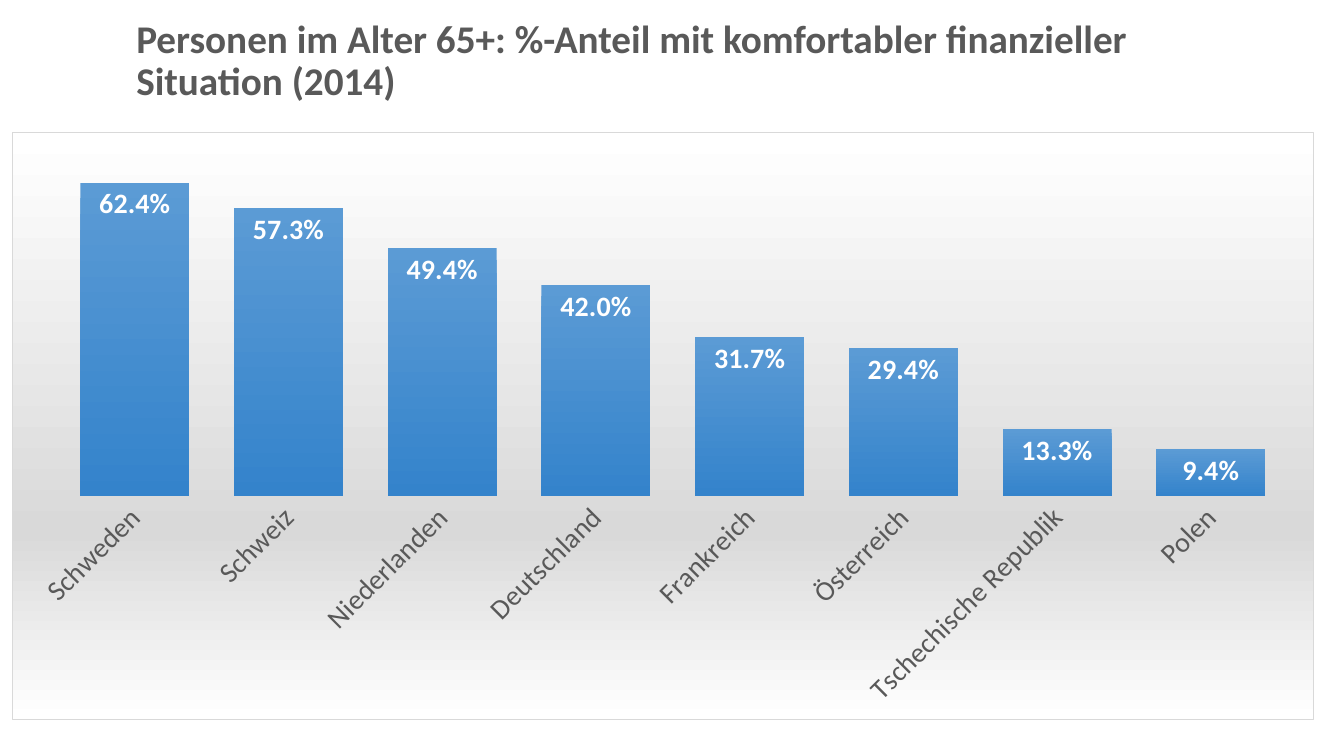
from pptx import Presentation
from pptx.chart.data import CategoryChartData
from pptx.dml.color import RGBColor
from pptx.enum.chart import XL_CHART_TYPE, XL_LABEL_POSITION, XL_TICK_MARK
from pptx.enum.text import MSO_ANCHOR, MSO_AUTO_SIZE, PP_ALIGN
from pptx.oxml import parse_xml
from pptx.oxml.ns import nsdecls
from pptx.util import Cm, Pt

COLUMN = XL_CHART_TYPE.COLUMN_CLUSTERED
INSIDE = XL_LABEL_POSITION.INSIDE_END
NO_TICK = XL_TICK_MARK.NONE
MIDDLE = MSO_ANCHOR.MIDDLE
NO_FIT = MSO_AUTO_SIZE.NONE
LEFT = PP_ALIGN.LEFT

FACE = "Calibri"
GREY = "595959"
RATE = "0.0%"
TITLE = "Personen im Alter 65+: %-Anteil mit komfortabler finanzieller Situation (2014)"
SHARES = {
    "Schweden": 0.624,
    "Schweiz": 0.573,
    "Niederlanden": 0.494,
    "Deutschland": 0.42,
    "Frankreich": 0.317,
    "Österreich": 0.294,
    "Tschechische Republik": 0.133,
    "Polen": 0.094,
}
TITLE_BOX = (3.18, 0.74, 28.88, 1.63)
CHART_BOX = (0.3, 3.33, 32.82, 14.81)
PLOT_BOX = {"x": 0.035, "y": 0.02, "w": 0.945, "h": 0.6}
BACK = [(0, "FFFFFF"), (68, "D9D9D9"), (100, "FFFFFF")]
BLUES = [(0, "5B9BD5"), (100, "3483CB")]


def color(code):
    """Turn a hex string into a colour."""
    return RGBColor.from_string(code)


def apply(target, values):
    """Set each named value on the target."""
    for name, value in values.items():
        setattr(target, name, value)


def style(font, size, code, bold=False):
    """Format a font."""
    apply(font, {"name": FACE, "size": Pt(size), "bold": bold})
    font.color.rgb = color(code)


def shade(stops, edge=None):
    """Build shape properties with a downward gradient and an optional edge."""
    marks = "".join(
        f'<a:gs pos="{pos * 1000}"><a:srgbClr val="{code}"/></a:gs>' for pos, code in stops
    )
    paint = f'<a:solidFill><a:srgbClr val="{edge}"/></a:solidFill>' if edge else "<a:noFill/>"
    return parse_xml(
        f'<c:spPr {nsdecls("c", "a")}><a:gradFill rotWithShape="1"><a:gsLst>{marks}</a:gsLst>'
        f'<a:lin ang="5400000" scaled="0"/></a:gradFill><a:ln w="9525">{paint}</a:ln></c:spPr>'
    )


def layout(area, box):
    """Fix the inner plot area at fractions of the chart."""
    for old in area.xpath("c:layout"):
        area.remove(old)
    modes = "".join(f'<c:{key}Mode val="edge"/>' for key in "xy")
    sides = "".join(f'<c:{key} val="{value}"/>' for key, value in box.items())
    area.insert(0, parse_xml(
        f'<c:layout {nsdecls("c")}><c:manualLayout><c:layoutTarget val="inner"/>'
        f"{modes}{sides}</c:manualLayout></c:layout>"
    ))


def add_title(slide, box):
    """Place and format the title in its box."""
    title = slide.shapes.title
    apply(title, dict(zip(("left", "top", "width", "height"), map(Cm, box))))
    frame = title.text_frame
    frame.text = TITLE
    apply(frame, {"vertical_anchor": MIDDLE, "word_wrap": True, "auto_size": NO_FIT})
    line = frame.paragraphs[0]
    apply(line, {"alignment": LEFT, "line_spacing": 0.9})
    style(line.runs[0].font, 28, GREY, True)


def add_columns(slide, box):
    """Place the column chart of shares in its box."""
    data = CategoryChartData(number_format=RATE)
    data.categories = list(SHARES)
    data.add_series("Series 1", list(SHARES.values()))
    chart = slide.shapes.add_chart(COLUMN, *map(Cm, box), data).chart
    apply(chart, {"has_title": False, "has_legend": False})
    style(chart.font, 10, "000000")

    plot = chart.plots[0]
    apply(plot, {"gap_width": 41, "vary_by_categories": False, "has_data_labels": True})
    labels = plot.data_labels
    apply(labels, {"show_value": True, "position": INSIDE,
                   "number_format": RATE, "number_format_is_linked": False})
    style(labels.font, 20, "FFFFFF", True)

    apply(chart.value_axis, {"visible": False, "has_major_gridlines": False,
                             "minimum_scale": 0, "maximum_scale": 0.7})
    chart.value_axis.tick_labels.number_format = RATE
    axis = chart.category_axis
    apply(axis, {"major_tick_mark": NO_TICK, "minor_tick_mark": NO_TICK})
    axis.format.line.fill.background()
    style(axis.tick_labels.font, 20, GREY)

    root = chart.element
    root.xpath(".//c:catAx/c:txPr/a:bodyPr")[0].set("rot", "-2700000")
    root.xpath("c:chart")[0].addnext(shade(BACK, "D9D9D9"))
    root.xpath(".//c:ser/c:tx")[0].addnext(shade(BLUES))
    layout(root.xpath(".//c:plotArea")[0], PLOT_BOX)


def main():
    """Build and save the slide."""
    deck = Presentation()
    apply(deck, {"slide_width": Cm(33.87), "slide_height": Cm(19.05)})
    slide = deck.slides.add_slide(deck.slide_layouts[5])
    add_title(slide, TITLE_BOX)
    add_columns(slide, CHART_BOX)
    deck.save("out.pptx")


if __name__ == "__main__":
    main()
